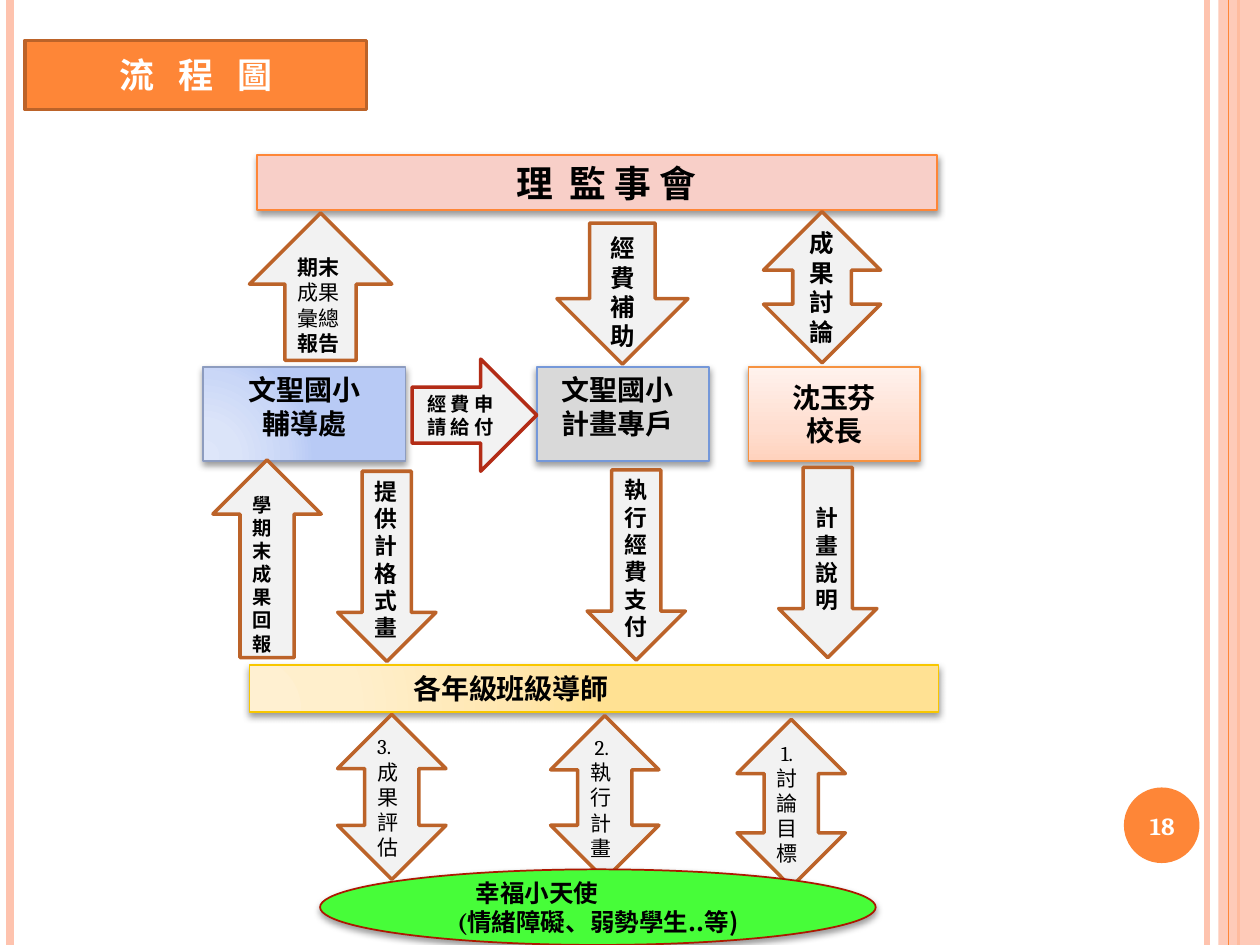
from lxml.etree import SubElement
from pptx import Presentation
from pptx.dml.color import RGBColor
from pptx.enum.shapes import MSO_CONNECTOR, MSO_SHAPE as Kind
from pptx.enum.text import MSO_ANCHOR as Anchor, PP_ALIGN as Align
from pptx.oxml.ns import qn
from pptx.util import Inches, Pt

COLORS = {
    "orange": "FE8637", "peach": "FEC3AE", "rust": "BC6329", "brick": "B32C16",
    "pink": "F8CFC8", "gray": "F2F2F2", "silver": "D9D9D9", "blue": "7598D9",
    "slate": "8D9CBF", "tan": "F69240", "gold": "F8C700", "green": "47FD39",
    "red": "AC1800", "black": "000000", "white": "FFFFFF",
}
GLOW = [0, 30, 75, 100]
OFFICE_GLOW = list(zip(GLOW, ["DEE6FA", "DBE4F9", "CAD7F7", "B8CAF5"]))
TEACHER_GLOW = list(zip(GLOW, ["FFF0D1", "FFEFCC", "FFE7B1", "FFE193"]))
PRINCIPAL_FADE = [(0, "FFD2BD"), (35, "FFDED0"), (100, "FFF2ED")]
CELL = 0.1


def color(name):
    return RGBColor.from_string(COLORS[name])


def add(parent, tag, **attributes):
    return SubElement(parent, qn(tag), {key: str(value) for key, value in attributes.items()})


def write(shape, paragraphs, size=14, fill="black", bold=True, align=Align.LEFT,
          anchor=Anchor.TOP, left=0.1, top=0.05, indent=0):
    frame = shape.text_frame
    frame.word_wrap = True
    frame.vertical_anchor = anchor
    frame.margin_left, frame.margin_top = Inches(left), Inches(top)
    for index, runs in enumerate(paragraphs):
        paragraph = frame.add_paragraph() if index else frame.paragraphs[0]
        paragraph.alignment = align
        if indent and not index:
            paragraph.alignment = Align.LEFT
            paragraph._p.get_or_add_pPr().set("marL", str(Inches(indent)))
        for text, changes in [(runs, {})] if isinstance(runs, str) else runs:
            run = paragraph.add_run()
            run.text = text
            run.font.name = changes.get("font", "Cambria")
            run.font.size = Pt(size)
            run.font.bold = changes.get("bold", bold)
            run.font.color.rgb = color(fill)
            if "spacing" in changes:
                run.font._element.set("spc", str(changes["spacing"]))


class Flowchart:
    def __init__(self, slide):
        self.slide = slide

    def place(self, *cells):
        return [Inches(cell * CELL) for cell in cells]

    def rule(self, column, width, fill="peach"):
        line = self.slide.shapes.add_connector(
            MSO_CONNECTOR.STRAIGHT, *self.place(column, 0, column, 75))
        line.line.color.rgb = color(fill)
        line.line.width = Pt(width)
        add(line._element.spPr, "a:effectLst")

    def shape(self, kind, cells, fill, line=None, width=1, shadow=False, alpha=None):
        shape = self.slide.shapes.add_shape(kind, *self.place(*cells))
        shape.shadow.inherit = False
        shape.fill.solid()
        properties = shape._element.spPr
        if isinstance(fill, list):
            self.gradient(properties, fill)
        else:
            shape.fill.fore_color.rgb = color(fill)
        if alpha:
            add(properties.find(qn("a:solidFill"))[0], "a:alpha", val=alpha * 1000)
        if line:
            shape.line.color.rgb = color(line)
            shape.line.width = Pt(width)
        else:
            shape.line.fill.background()
        if shadow:
            outer = add(properties.find(qn("a:effectLst")), "a:outerShdw", blurRad=Pt(4),
                        dist=Pt(2), dir=5400000, rotWithShape=0)
            add(add(outer, "a:srgbClr", val=COLORS["black"]), "a:alpha", val=40000)
        return shape

    def gradient(self, properties, stops):
        solid = properties.find(qn("a:solidFill"))
        gradient = add(properties, "a:gradFill", rotWithShape=1)
        properties.replace(solid, gradient)
        stop_list = add(gradient, "a:gsLst")
        for position, value in stops:
            add(add(stop_list, "a:gs", pos=position * 1000), "a:srgbClr", val=value)
        if stops is PRINCIPAL_FADE:
            add(gradient, "a:lin", ang=16200000, scaled=1)
        else:
            add(add(gradient, "a:path", path="circle"), "a:fillToRect",
                l=5000, t=100000, r=120000, b=10000)

    def box(self, cells, fill, line, paragraphs, kind=Kind.RECTANGLE, **style):
        write(self.shape(kind, cells, fill, line, shadow=True), paragraphs, **style)

    def arrow(self, kind, cells, text, line="rust", **style):
        write(self.shape(kind, cells, "gray", line, 2), [text], **style)

    def label(self, cells, text, **style):
        write(self.slide.shapes.add_textbox(*self.place(*cells)), [text], **style)


def main():
    presentation = Presentation()
    presentation.slide_width, presentation.slide_height = Inches(10), Inches(7.5)
    chart = Flowchart(presentation.slides.add_slide(presentation.slide_layouts[6]))
    middle = {"align": Align.CENTER, "anchor": Anchor.MIDDLE}

    chart.rule(95.8, 3)
    chart.rule(0.8, 4.5)
    chart.rule(98.3, 1.5, "orange")
    chart.shape(Kind.RECTANGLE, (96.7, 0, 3.3, 75), "peach", alpha=87)
    chart.rule(97.5, 0.75, "orange")
    chart.shape(Kind.OVAL, (89.2, 62.5, 6, 6), "orange")

    chart.box((20.4, 12.3, 54, 4.4), "pink", "orange",
              [[("理 ", {"spacing": 230}), ("監 事 會", {})]],
              size=21, align=Align.CENTER, left=0.24)
    chart.arrow(Kind.UP_ARROW, (19.8, 16.9, 11.3, 11.7),
                [("期末", {}), ("成果彙總", {"bold": False}), ("報告", {})], size=12)
    chart.arrow(Kind.DOWN_ARROW, (44.2, 17.7, 10.4, 11.2), "經費補助",
                align=Align.CENTER, top=0.08)
    chart.arrow(Kind.UP_DOWN_ARROW, (60.6, 16.8, 9.3, 12), "成果討論", **middle)

    chart.box((16.1, 29.1, 16.1, 7.5), OFFICE_GLOW, "slate", ["文聖國小", "輔導處"],
              size=16, align=Align.CENTER)
    chart.box((42.6, 29.1, 13.7, 7.5), "silver", "blue", ["文聖國小", "計畫專戶"],
              size=16, left=0.2)
    chart.box((59.4, 29.1, 13.6, 7.5), PRINCIPAL_FADE, "tan",
              [[("沈玉芬", {"font": "Calibri"})], [("校長", {"font": "Calibri"})]],
              size=16, **middle)

    for column, row, text, top in [(61.8, 37.1, "計畫說明", 0.29),
                                   (26.8, 37.4, "提供計格式畫", 0.05),
                                   (46.6, 37.3, "執行經費支付", 0.05)]:
        chart.arrow(Kind.DOWN_ARROW, (column, row, 7.8, 15.1), text, size=13, top=top)
    chart.arrow(Kind.UP_ARROW, (16.9, 36.5, 8.6, 15.7), "學期末成果回報", size=11)

    chart.box((19.8, 52.8, 54.7, 3.7), TEACHER_GLOW, "gold", ["各年級班級導師"],
              size=16, left=1.3)
    for column, row, height, text in [(58.5, 57.1, 13.3, " 1.討論目標"),
                                      (43.7, 56.8, 13, " 2.執行計畫"),
                                      (26.8, 56.7, 13.1, "3.成果評估")]:
        chart.arrow(Kind.UP_DOWN_ARROW, (column, row, 8.6, height), text,
                    size=12, bold=False, anchor=Anchor.MIDDLE)
    chart.box((25.4, 69, 44.1, 6), "green", "red",
              ["幸福小天使",
               [("(情緒障礙", {}), ("、弱勢學生..等)", {"font": "Noto Sans CJK TC"})]],
              kind=Kind.OVAL, indent=0.49, **middle)
    chart.arrow(Kind.RIGHT_ARROW, (32.7, 28.5, 9.9, 8.9), "經 費 申請 給 付",
                line="brick", size=11, **middle)

    title = chart.shape(Kind.RECTANGLE, (2, 3.2, 27.1, 5.5), "orange", "rust", 2)
    write(title, [[("流 程 ", {"spacing": 450}), ("圖", {})]],
          size=20, fill="white", **middle)
    chart.label((88.9, 62.7, 6.7, 5.7), "18", fill="white", **middle)

    presentation.save("out.pptx")


if __name__ == "__main__":
    main()
